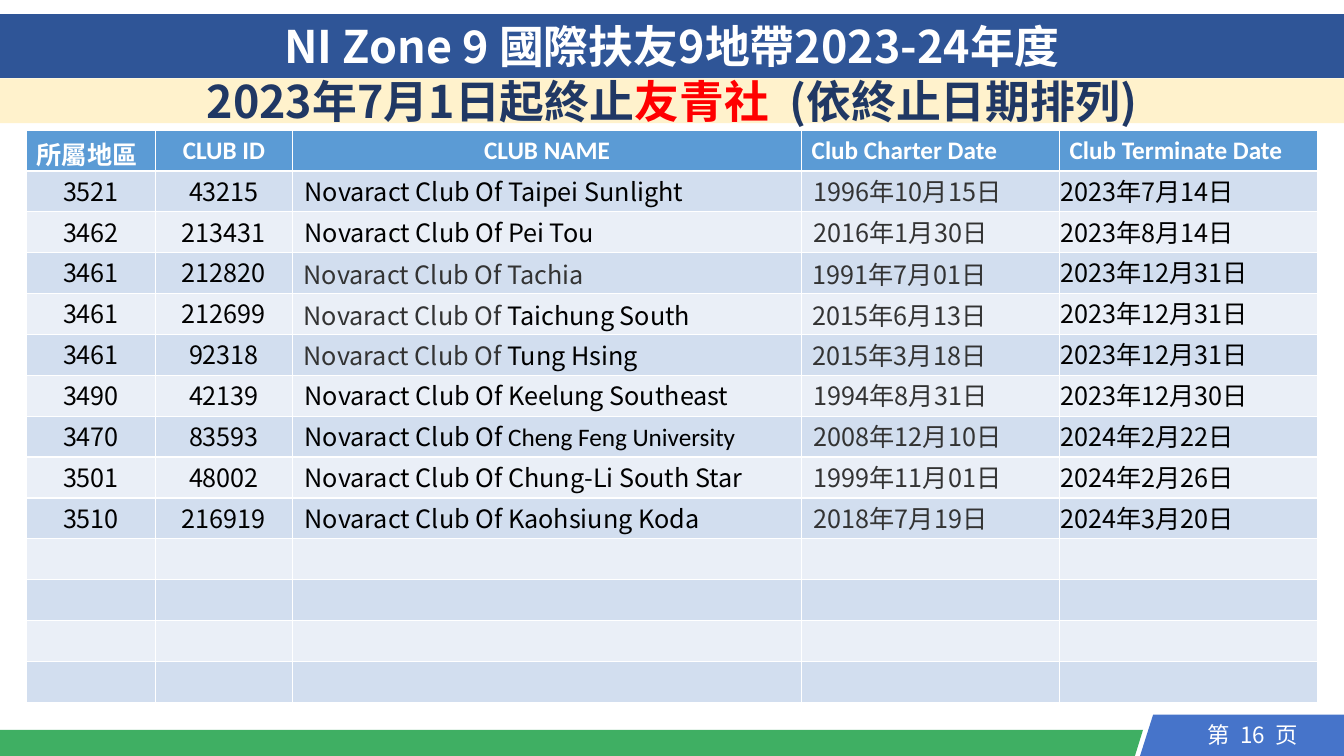
from pptx import Presentation
from pptx.dml.color import RGBColor
from pptx.enum.shapes import MSO_SHAPE
from pptx.enum.text import MSO_ANCHOR, MSO_AUTO_SIZE, PP_ALIGN
from pptx.oxml.ns import qn
from pptx.util import Pt
from lxml.etree import SubElement

WHITE = RGBColor(0xFF, 0xFF, 0xFF)
BLACK = RGBColor(0, 0, 0)
GREY = RGBColor(0x33, 0x33, 0x33)
RED = RGBColor(0xFF, 0, 0)
NAVY = RGBColor(0x20, 0x38, 0x64)
TITLE_BLUE = RGBColor(0x2F, 0x55, 0x97)
CREAM = RGBColor(0xFF, 0xF2, 0xCC)
HEADER_BLUE = RGBColor(0x5B, 0x9B, 0xD5)
BANDS = (RGBColor(0xD2, 0xDE, 0xEF), RGBColor(0xEA, 0xEF, 0xF7))
FOOTER_GREEN = RGBColor(0x3F, 0xAF, 0x63)
FOOTER_BLUE = RGBColor(0x46, 0x74, 0xCA)

TITLE_FONT = "Noto Sans CJK JP"
BODY_FONT = "Noto Sans CJK SC"
LATIN_FONT = "Calibri"

TITLE = "NI Zone 9 國際扶友9地帶2023-24年度"
SUBTITLE = (("2023年7月1日起終止", NAVY), ("友青社 ", RED), (" (依終止日期排列)", NAVY))
HEADERS = ("所屬地區", "CLUB ID", "CLUB NAME", "Club Charter Date", "Club Terminate Date")
PREFIX = "Novaract Club Of "
CLUBS = (
    ("3521", "43215", "Taipei Sunlight", "1996年10月15日", "2023年7月14日"),
    ("3462", "213431", "Pei Tou", "2016年1月30日", "2023年8月14日"),
    ("3461", "212820", "Tachia", "1991年7月01日", "2023年12月31日"),
    ("3461", "212699", "Taichung South", "2015年6月13日", "2023年12月31日"),
    ("3461", "92318", "Tung Hsing", "2015年3月18日", "2023年12月31日"),
    ("3490", "42139", "Keelung Southeast", "1994年8月31日", "2023年12月30日"),
    ("3470", "83593", "Cheng Feng University", "2008年12月10日", "2024年2月22日"),
    ("3501", "48002", "Chung-Li South Star", "1999年11月01日", "2024年2月26日"),
    ("3510", "216919", "Kaohsiung Koda", "2018年7月19日", "2024年3月20日"),
)
GREY_DISTRICT = "3461"
GREY_NAME = "Tachia"
CALIBRI_NAME = "Cheng Feng University"
PAGE_NUMBER = ("第", " ", "16", " ", "页")

COLUMN_WIDTHS = (92, 98, 363.6, 184.3, 184.3)
ROW_COUNT = 14
ROW_HEIGHT = 29.2
CELL_INSET = 0.72
CELL_INDENT = 8
FOOTERS = (
    (FOOTER_GREEN, ((0, 540), (810.7, 540), (816.5, 521.3), (0, 521.3))),
    (FOOTER_BLUE, ((823.7, 510.5), (814.3, 540), (960, 540), (960, 510.5))),
)


def add_run(paragraph, text, size, color, font=BODY_FONT, bold=False):
    run = paragraph.add_run()
    run.text = text
    run.font.size = Pt(size)
    run.font.bold = bold
    run.font.color.rgb = color
    run.font.name = font
    if font != LATIN_FONT:
        SubElement(run.font._element, qn("a:ea")).set("typeface", font)
    return run


def place(shape, left, top, width, height):
    shape.left, shape.top, shape.width, shape.height = map(Pt, (left, top, width, height))


def paint(shape, color):
    shape.fill.solid()
    shape.fill.fore_color.rgb = color
    shape.line.fill.background()


def fill_bar(shape, color, runs):
    paint(shape, color)
    frame = shape.text_frame
    frame.word_wrap = True
    frame.auto_size = MSO_AUTO_SIZE.NONE
    frame.vertical_anchor = MSO_ANCHOR.MIDDLE
    paragraph = frame.paragraphs[0]
    paragraph.alignment = PP_ALIGN.CENTER
    for text, text_color in runs:
        add_run(paragraph, text, 32, text_color, TITLE_FONT, True)


def add_footer(slide):
    for color, points in FOOTERS:
        corners = [(Pt(x), Pt(y)) for x, y in points]
        builder = slide.shapes.build_freeform(*corners[0], scale=1.0)
        builder.add_line_segments(corners[1:], close=True)
        shape = builder.convert_to_shape()
        shape.shadow.inherit = False
        paint(shape, color)
    box = slide.shapes.add_textbox(Pt(840), Pt(512), Pt(110), Pt(26))
    frame = box.text_frame
    frame.word_wrap = True
    frame.vertical_anchor = MSO_ANCHOR.MIDDLE
    paragraph = frame.paragraphs[0]
    paragraph.alignment = PP_ALIGN.CENTER
    for text in PAGE_NUMBER:
        run = add_run(paragraph, text, 16, WHITE)
        if text == " ":
            run.font._element.set("spc", "400")


def club_runs(column, club):
    text = club[column]
    if column == 2:
        prefix_color = GREY if club[0] == GREY_DISTRICT else BLACK
        name_color = GREY if text == GREY_NAME else BLACK
        name_font = LATIN_FONT if text == CALIBRI_NAME else BODY_FONT
        return ((PREFIX, prefix_color, BODY_FONT), (text, name_color, name_font))
    return ((text, GREY if column == 3 else BLACK, BODY_FONT),)


def fill_club_cell(cell, column, club):
    middle = club[0] == GREY_DISTRICT and column in (2, 3)
    inset = Pt(0 if middle else CELL_INSET)
    cell.margin_left = cell.margin_right = cell.margin_top = inset
    cell.margin_bottom = 0
    if middle:
        cell.vertical_anchor = MSO_ANCHOR.MIDDLE
    paragraph = cell.text_frame.paragraphs[0]
    if column < 2:
        paragraph.alignment = PP_ALIGN.CENTER
    if column in (2, 3):
        properties = paragraph._p.get_or_add_pPr()
        properties.set("marL", str(Pt(CELL_INDENT)))
        properties.set("indent", "0")
    for text, color, font in club_runs(column, club):
        add_run(paragraph, text, 18, color, font)


def add_club_table(slide):
    frame = slide.shapes.add_table(
        ROW_COUNT, len(HEADERS), Pt(19), Pt(92.9),
        Pt(sum(COLUMN_WIDTHS)), Pt(ROW_COUNT * ROW_HEIGHT))
    table = frame.table
    for column, width in zip(table.columns, COLUMN_WIDTHS):
        column.width = Pt(width)
    for row_index, row in enumerate(table.rows):
        row.height = Pt(ROW_HEIGHT)
        for column, cell in enumerate(row.cells):
            cell.fill.solid()
            cell.fill.fore_color.rgb = BANDS[(row_index - 1) % 2] if row_index else HEADER_BLUE
            if row_index == 0:
                paragraph = cell.text_frame.paragraphs[0]
                if column in (1, 2):
                    paragraph.alignment = PP_ALIGN.CENTER
                add_run(paragraph, HEADERS[column], 18, WHITE, LATIN_FONT, True)
            elif row_index <= len(CLUBS):
                fill_club_cell(cell, column, CLUBS[row_index - 1])


def main():
    presentation = Presentation()
    presentation.slide_width = Pt(960)
    presentation.slide_height = Pt(540)
    slide = presentation.slides.add_slide(presentation.slide_layouts[5])
    add_footer(slide)
    title = slide.shapes.title
    place(title, 0, 10, 960, 45.6)
    fill_bar(title, TITLE_BLUE, ((TITLE, WHITE),))
    subtitle = slide.shapes.add_shape(MSO_SHAPE.RECTANGLE, 0, Pt(56), Pt(960), Pt(32))
    subtitle.shadow.inherit = False
    fill_bar(subtitle, CREAM, SUBTITLE)
    add_club_table(slide)
    presentation.save("out.pptx")


if __name__ == "__main__":
    main()
